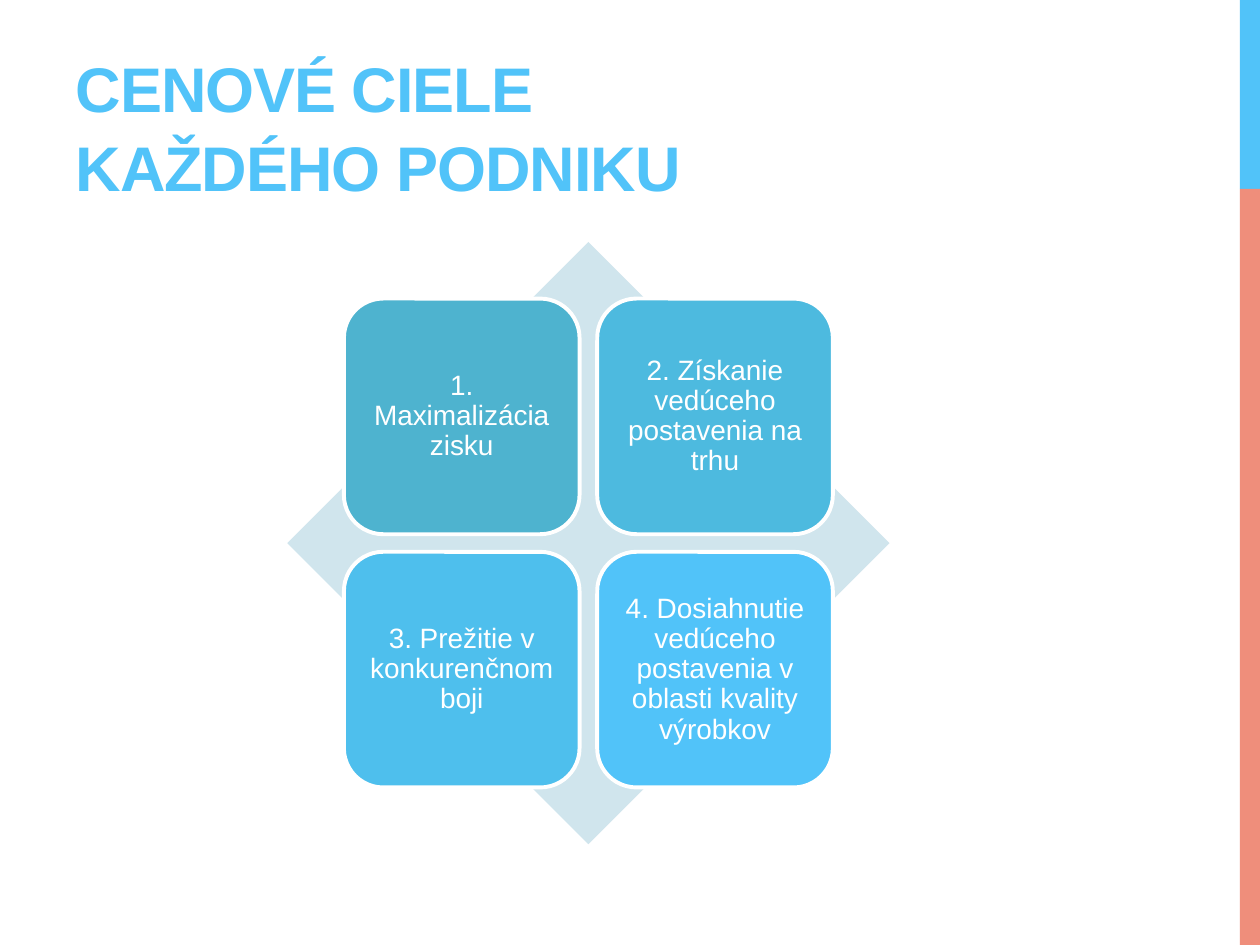
import pptx
import pptx.util
import pptx.dml.color
import pptx.enum.shapes
import pptx.enum.text

Inches = pptx.util.Inches
Pt = pptx.util.Pt
RGBColor = pptx.dml.color.RGBColor
MSO_SHAPE = pptx.enum.shapes.MSO_SHAPE
MSO_ANCHOR = pptx.enum.text.MSO_ANCHOR
PP_ALIGN = pptx.enum.text.PP_ALIGN

FONT = "Arial"
BLUE = RGBColor(0x51, 0xC3, 0xF9)
CORAL = RGBColor(0xEF, 0x8E, 0x7B)
PALE_BLUE = RGBColor(0xD0, 0xE5, 0xED)
WHITE = RGBColor(0xFF, 0xFF, 0xFF)

GOALS = [
    ("1. Maximalizácia zisku", RGBColor(0x4E, 0xB3, 0xCF)),
    ("2. Získanie vedúceho postavenia na trhu", RGBColor(0x4D, 0xBA, 0xDF)),
    ("3. Prežitie v konkurenčnom boji", RGBColor(0x4E, 0xBF, 0xED)),
    ("4. Dosiahnutie vedúceho postavenia v oblasti kvality výrobkov", BLUE),
]


def add_filled_shape(shapes, kind, left, top, width, height, color):
    shape = shapes.add_shape(kind, left, top, width, height)
    shape.shadow.inherit = False
    shape.fill.solid()
    shape.fill.fore_color.rgb = color
    shape.line.fill.background()
    return shape


def format_text(paragraph, size, color, alignment, line_spacing):
    paragraph.alignment = alignment
    paragraph.line_spacing = line_spacing
    for run in paragraph.runs:
        run.font.name = FONT
        run.font.size = Pt(size)
        run.font.color.rgb = color


def add_side_bar(slide, left, top, width, height):
    """Vertical bar whose top fifth is blue and the rest coral."""
    blue_height = height // 5
    add_filled_shape(slide.shapes, MSO_SHAPE.RECTANGLE,
                     left, top, width, blue_height, BLUE)
    add_filled_shape(slide.shapes, MSO_SHAPE.RECTANGLE,
                     left, top + blue_height, width, height - blue_height, CORAL)


def place_title(slide, left, top, width, height):
    title = slide.shapes.title
    title.left, title.top, title.width, title.height = left, top, width, height
    frame = title.text_frame
    frame.text = "CENOVÉ CIELE KAŽDÉHO PODNIKU"
    frame.word_wrap = True
    frame.auto_size = pptx.enum.text.MSO_AUTO_SIZE.NONE
    frame.vertical_anchor = MSO_ANCHOR.BOTTOM
    paragraph = frame.paragraphs[0]
    format_text(paragraph, 36, BLUE, PP_ALIGN.LEFT, 1.05)
    run = paragraph.runs[0]
    run.font.bold = True
    run.font._element.set("spc", "-60")


def add_goal_card(shapes, left, top, size, text, color):
    card = add_filled_shape(shapes, MSO_SHAPE.ROUNDED_RECTANGLE,
                            left, top, size, size, color)
    card.line.color.rgb = WHITE
    card.line.width = Pt(2.25)
    frame = card.text_frame
    frame.text = text
    frame.word_wrap = True
    frame.vertical_anchor = MSO_ANCHOR.MIDDLE
    frame.margin_left = frame.margin_right = Inches(0.07)
    frame.margin_top = frame.margin_bottom = Inches(0.07)
    format_text(frame.paragraphs[0], 16, WHITE, PP_ALIGN.CENTER, 0.9)


def add_goal_matrix(slide, left, top, size):
    """Diamond with a centred two by two grid of goal cards."""
    shapes = slide.shapes.add_group_shape().shapes
    add_filled_shape(shapes, MSO_SHAPE.DIAMOND, left, top, size, size, PALE_BLUE)
    card_size = Inches(1.87)
    pitch = card_size + Inches(0.14)
    margin = (size - pitch - card_size) // 2
    for index, (text, color) in enumerate(GOALS):
        row, column = divmod(index, 2)
        add_goal_card(shapes, left + margin + column * pitch,
                      top + margin + row * pitch, card_size, text, color)


def main():
    presentation = pptx.Presentation()
    presentation.slide_width = Inches(10)
    presentation.slide_height = Inches(7.5)
    title_only = presentation.slide_layouts[5]
    slide = presentation.slides.add_slide(title_only)
    add_side_bar(slide, Inches(9.84), 0, Inches(0.16), Inches(7.5))
    place_title(slide, Inches(0.5), Inches(0.17), Inches(6.33), Inches(1.5))
    add_goal_matrix(slide, Inches(2.28), Inches(1.92), Inches(4.78))
    presentation.save("out.pptx")


if __name__ == "__main__":
    main()
